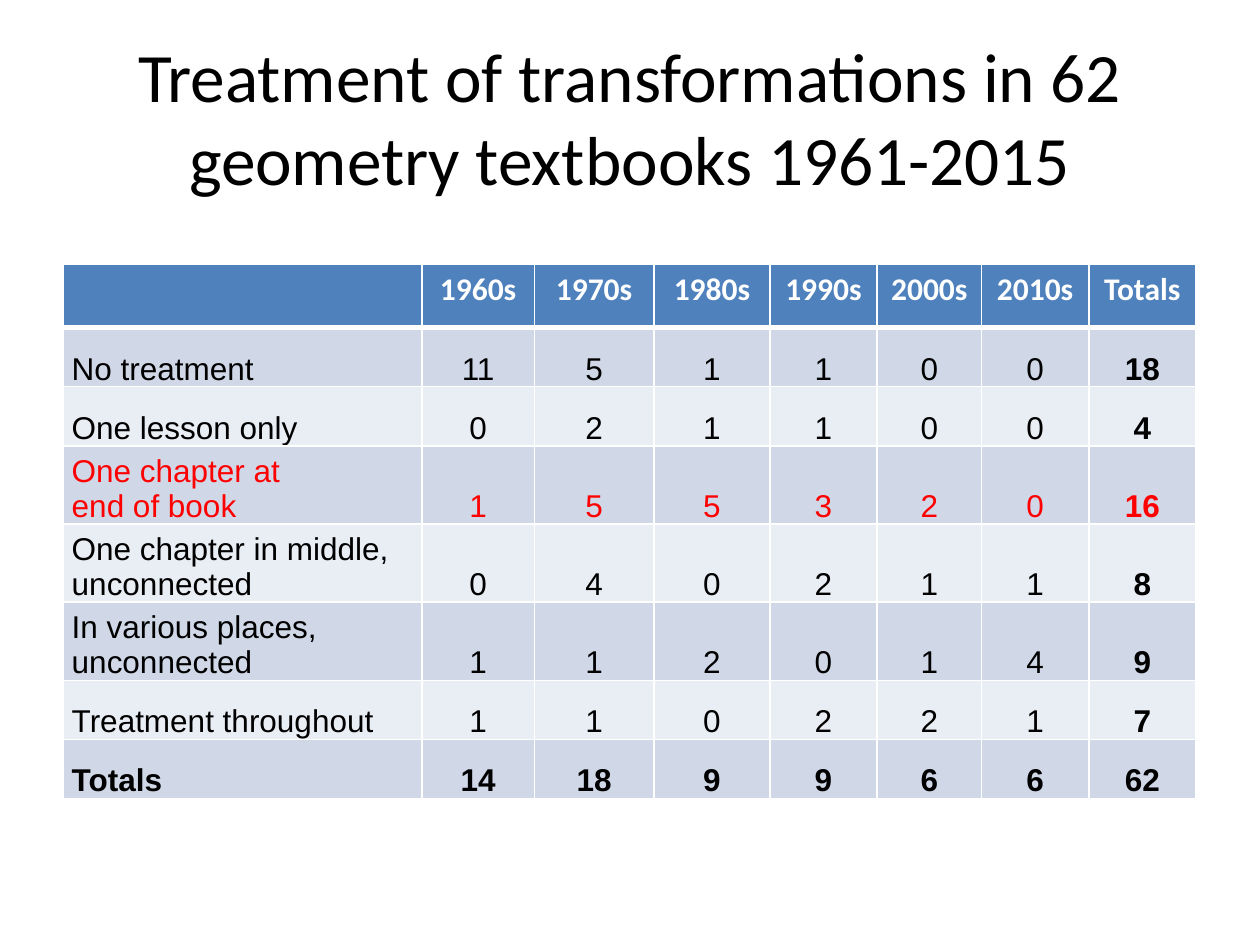
from lxml.etree import SubElement
from pptx import Presentation
from pptx.dml.color import RGBColor
from pptx.enum.text import MSO_ANCHOR, PP_ALIGN
from pptx.oxml.ns import qn
from pptx.util import Pt

COLORS = {
    "black": "000000",
    "white": "FFFFFF",
    "red": "FF0000",
    "header": "4F81BD",
    "dark_band": "D0D8E8",
    "light_band": "E9EDF4",
}
DECADES = ["1960s", "1970s", "1980s", "1990s", "2000s", "2010s"]
HIGHLIGHTED = "One chapter at \vend of book"
TREATMENTS = {
    "No treatment": [11, 5, 1, 1, 0, 0],
    "One lesson only": [0, 2, 1, 1, 0, 0],
    HIGHLIGHTED: [1, 5, 5, 3, 2, 0],
    "One chapter in middle, unconnected": [0, 4, 0, 2, 1, 1],
    "In various places, unconnected": [1, 1, 2, 0, 1, 4],
    "Treatment throughout": [1, 1, 0, 2, 2, 1],
}
COLUMN_WIDTHS = [205.2, 64.1, 68.4, 66.3, 61.2, 59.8, 61.2, 61.2]
HEADER_HEIGHT, SINGLE_HEIGHT, DOUBLE_HEIGHT = 36, 33.8, 44.7
ROW_HEIGHTS = [HEADER_HEIGHT] + [SINGLE_HEIGHT] * 2 + [DOUBLE_HEIGHT] * 3 + [SINGLE_HEIGHT] * 2


def write_text(frame, text, font="Arial", size=18, color="black", bold=False,
               align=PP_ALIGN.CENTER, space_after=0):
    frame.text = text
    frame.word_wrap = True
    paragraph = frame.paragraphs[0]
    paragraph.alignment = align
    paragraph.space_after = Pt(space_after)
    for run in paragraph.runs:
        run.font.name = font
        run.font.size = Pt(size)
        run.font.bold = bold
        run.font.color.rgb = RGBColor.from_string(COLORS[color])


def add_title(slide, text):
    title = slide.shapes.add_textbox(Pt(36), Pt(21.6), Pt(648), Pt(90))
    title.text_frame.vertical_anchor = MSO_ANCHOR.MIDDLE
    write_text(title.text_frame, text, font="Calibri", size=39.6)


def style_cell(cell, fill, top=1, bottom=1):
    """Give the cell white borders, with widths in points, and a solid fill."""
    properties = cell._tc.get_or_add_tcPr()
    for side, width in {"lnL": 1, "lnR": 1, "lnT": top, "lnB": bottom}.items():
        border = SubElement(properties, qn(f"a:{side}"), w=str(Pt(width)))
        solid = SubElement(border, qn("a:solidFill"))
        SubElement(solid, qn("a:srgbClr"), val=COLORS["white"])
    cell.fill.solid()
    cell.fill.fore_color.rgb = RGBColor.from_string(COLORS[fill])


def fill_header(cells):
    for cell, heading in zip(cells, ["", *DECADES, "Totals"]):
        style_cell(cell, "header", bottom=3)
        write_text(cell.text_frame, heading, font="Calibri", color="white", bold=True)


def fill_row(cells, number, label, counts):
    is_total = label == "Totals"
    values = [label, *counts, sum(counts)]
    for column, (cell, value) in enumerate(zip(cells, values)):
        style_cell(cell, "dark_band" if number % 2 else "light_band",
                   top=3 if number == 1 else 1)
        cell.vertical_anchor = MSO_ANCHOR.BOTTOM
        cell.margin_left = cell.margin_right = Pt(5)
        cell.margin_top = cell.margin_bottom = Pt(0)
        write_text(cell.text_frame, str(value),
                   color="red" if label == HIGHLIGHTED else "black",
                   bold=is_total or column == len(values) - 1,
                   align=PP_ALIGN.CENTER if column else PP_ALIGN.LEFT,
                   space_after=6)


def add_treatment_table(slide):
    table = slide.shapes.add_table(
        len(ROW_HEIGHTS), len(COLUMN_WIDTHS), Pt(36), Pt(151.2),
        Pt(sum(COLUMN_WIDTHS)), Pt(sum(ROW_HEIGHTS))).table
    table.horz_banding = False
    for column, width in zip(table.columns, COLUMN_WIDTHS):
        column.width = Pt(width)
    for row, height in zip(table.rows, ROW_HEIGHTS):
        row.height = Pt(height)

    decade_totals = [sum(counts) for counts in zip(*TREATMENTS.values())]
    body = {**TREATMENTS, "Totals": decade_totals}
    fill_header(table.rows[0].cells)
    for number, (label, counts) in enumerate(body.items(), start=1):
        fill_row(table.rows[number].cells, number, label, counts)


def main():
    presentation = Presentation()
    presentation.slide_width, presentation.slide_height = Pt(720), Pt(540)
    slide = presentation.slides.add_slide(presentation.slide_layouts[6])
    add_title(slide, "Treatment of transformations in 62 geometry textbooks 1961-2015")
    add_treatment_table(slide)
    presentation.save("out.pptx")


if __name__ == "__main__":
    main()
